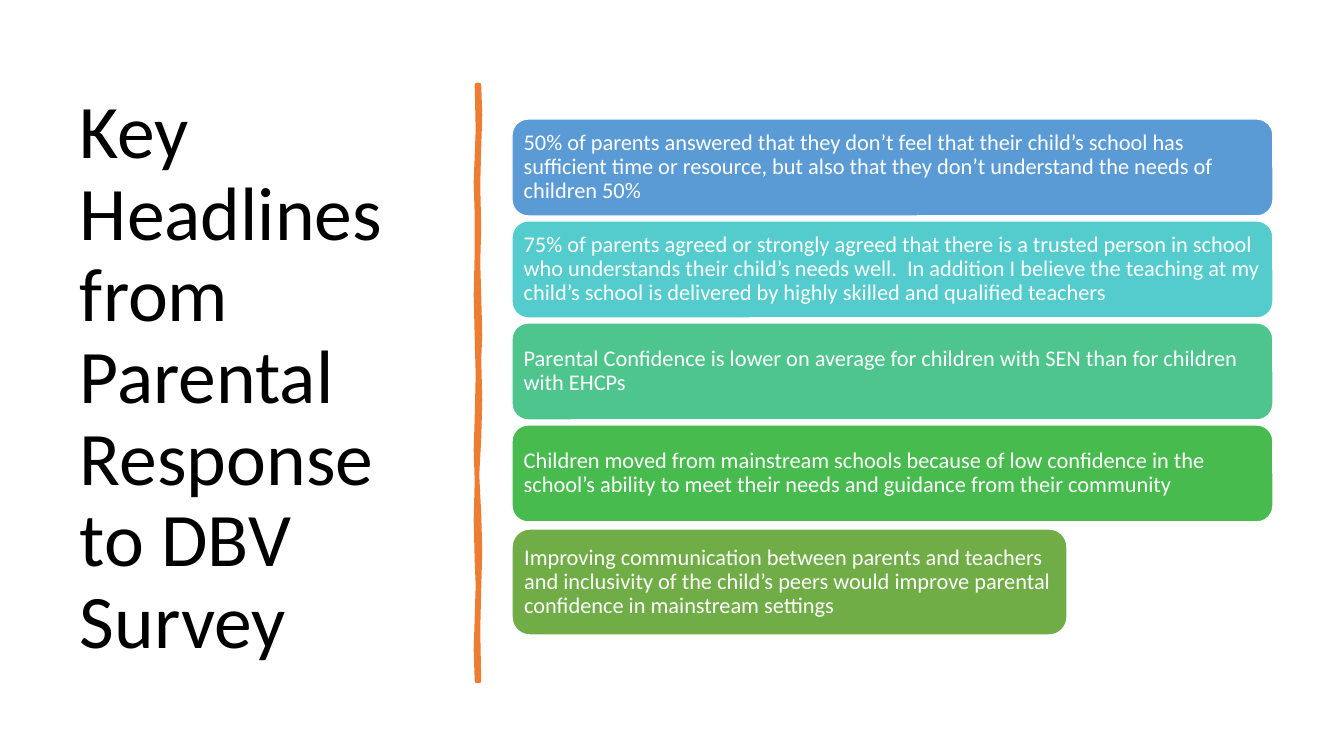
import pptx
import pptx.util
import pptx.dml.color
import pptx.enum.shapes
import pptx.enum.text

PX = 914400 / 100.8
COLORS = {
    "white": "FFFFFF", "black": "000000", "orange": "ED7D31",
    "blue": "5B9BD5", "aqua": "54CCCD", "mint": "4DC58D",
    "green": "48BB4F", "olive": "70AD47",
}


def box(*lengths):
    return [round(n * PX) for n in lengths]


def write(sp, text, size, color, inset_x, inset_y):
    tf = sp.text_frame
    tf.word_wrap = True
    tf.vertical_anchor = pptx.enum.text.MSO_ANCHOR.MIDDLE
    tf.margin_left, tf.margin_right = box(inset_x, inset_x)
    tf.margin_top, tf.margin_bottom = box(inset_y, inset_y)
    p = tf.paragraphs[0]
    p.text = text
    p.alignment = pptx.enum.text.PP_ALIGN.LEFT
    p.line_spacing = 0.9
    p.font.name = "Calibri"
    p.font.size = pptx.util.Pt(size)
    p.font.color.rgb = pptx.dml.color.RGBColor.from_string(COLORS[color])


prs = pptx.Presentation()
prs.slide_width, prs.slide_height = box(1344, 756)
s = prs.slides.add_slide(prs.slide_layouts[6])

title = s.shapes.add_textbox(*box(70, 71, 377, 616))
write(title, "Key Headlines from Parental Response to DBV Survey", 54, "black", 10, 5)

right_edge = [(479, 85), (480, 115), (479, 147), (478, 185), (479, 228), (478, 262),
              (479, 296), (480, 335), (479, 359), (480, 400), (479, 439), (477, 475),
              (479, 514), (480, 550), (479, 589), (478, 630), (479, 681)]
left_edge = [(477, 681), (476, 650), (477, 618), (478, 585), (477, 561), (476, 520),
             (477, 481), (476, 450), (477, 418), (478, 375), (477, 338), (476, 295),
             (477, 252), (477, 215), (476, 182), (478, 130), (477, 85)]
outline = right_edge + left_edge
fb = s.shapes.build_freeform(*outline[0], scale=PX)
fb.add_line_segments(outline[1:], close=True)
divider = fb.convert_to_shape()
divider.shadow.inherit = False
orange = pptx.dml.color.RGBColor.from_string(COLORS["orange"])
divider.fill.solid()
divider.fill.fore_color.rgb = orange
divider.line.color.rgb = orange
divider.line.width = pptx.util.Pt(3.25)

LEFT, TOP, PITCH, WIDTH, HEIGHT = 512, 119, 102, 761, 97
headlines = [
    ("blue", "50% of parents answered that they don’t feel that their child’s school has "
     "sufficient time or resource, but also that they don’t understand the needs of children 50%"),
    ("aqua", "75% of parents agreed or strongly agreed that there is a trusted person in school "
     "who understands their child’s needs well.  In addition I believe the teaching at my "
     "child’s school is delivered by highly skilled and qualified teachers"),
    ("mint", "Parental Confidence is lower on average for children with SEN than for children "
     "with EHCPs"),
    ("green", "Children moved from mainstream schools because of low confidence in the "
     "school’s ability to meet their needs and guidance from their community"),
    ("olive", "Improving communication between parents and teachers and inclusivity of the "
     "child’s peers would improve parental confidence in mainstream settings"),
]
bars = [(LEFT, TOP + i * PITCH, WIDTH, HEIGHT) for i in range(4)]
bars.append((LEFT, 529, 555, 106))

for (color, text), bar in zip(headlines, bars):
    sp = s.shapes.add_shape(pptx.enum.shapes.MSO_SHAPE.ROUNDED_RECTANGLE, *box(*bar))
    sp.shadow.inherit = False
    sp.fill.solid()
    sp.fill.fore_color.rgb = pptx.dml.color.RGBColor.from_string(COLORS[color])
    sp.line.color.rgb = pptx.dml.color.RGBColor.from_string(COLORS["white"])
    sp.line.width = pptx.util.Pt(1)
    write(sp, text, 16, "white", 7, 7)

prs.save("out.pptx")
